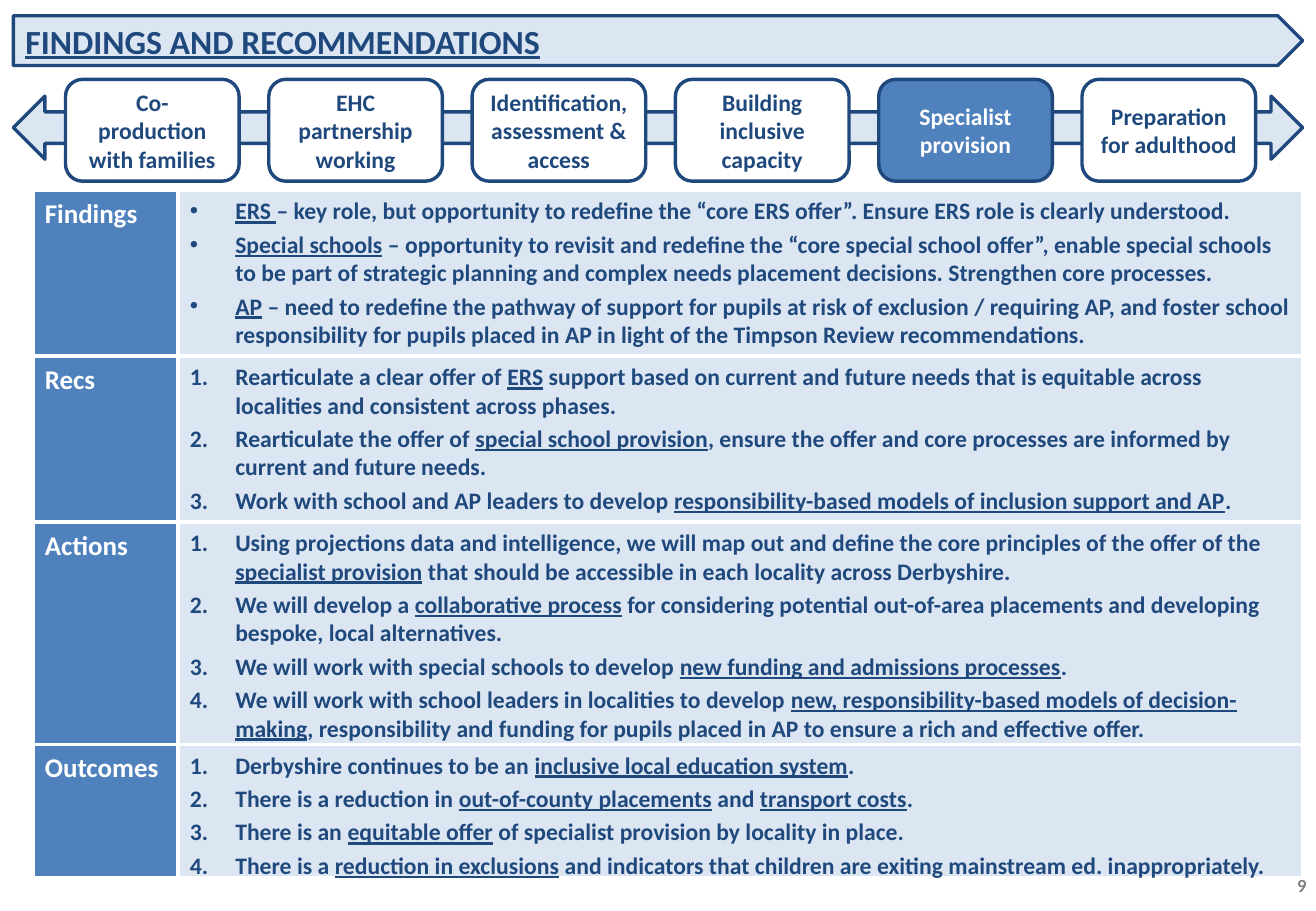
from pptx import Presentation
from pptx.dml.color import RGBColor
from pptx.enum.shapes import MSO_SHAPE
from pptx.enum.text import MSO_ANCHOR, PP_ALIGN
from pptx.oxml.ns import qn
from pptx.util import Cm, Pt
from lxml import etree

COLORS = {"navy": "1F497D", "blue": "4F81BD", "pale": "DCE6F2", "white": "FFFFFF", "grey": "808080"}
PLATE, ARROW = MSO_SHAPE.PENTAGON, MSO_SHAPE.LEFT_RIGHT_ARROW
ROUNDED, RECTANGLE = MSO_SHAPE.ROUNDED_RECTANGLE, MSO_SHAPE.RECTANGLE
TOP, MIDDLE = MSO_ANCHOR.TOP, MSO_ANCHOR.MIDDLE
LEFT, CENTER, RIGHT = PP_ALIGN.LEFT, PP_ALIGN.CENTER, PP_ALIGN.RIGHT

TITLE = "_FINDINGS AND RECOMMENDATIONS_"
PAGE_NUMBER = "9"
STEPS = [
    "Co-production with families",
    "EHC partnership working",
    "Identification, assessment & access",
    "Building inclusive capacity",
    "Specialist provision",
    "Preparation for adulthood",
]
CURRENT_STEP = "Specialist provision"
BULLET = ("buChar", {"char": "•"})
NUMBER = ("buAutoNum", {"type": "arabicPeriod"})
# Underscores enclose underlined words.
SECTIONS = [
    ("Findings", 3.47, BULLET, [
        "_ERS _– key role, but opportunity to redefine the “core ERS offer”. Ensure ERS role is clearly understood.",
        "_Special schools_ – opportunity to revisit and redefine the “core special school offer”, enable special "
        "schools to be part of strategic planning and complex needs placement decisions. Strengthen core processes.",
        "_AP_ – need to redefine the pathway of support for pupils at risk of exclusion / requiring AP, and foster "
        "school responsibility for pupils placed in AP in light of the Timpson Review recommendations.",
    ]),
    ("Recs", 3.47, NUMBER, [
        "Rearticulate a clear offer of _ERS_ support based on current and future needs that is equitable across "
        "localities and consistent across phases.",
        "Rearticulate the offer of _special school provision_, ensure the offer and core processes are informed by "
        "current and future needs.",
        "Work with school and AP leaders to develop _responsibility-based models of inclusion support and AP_.",
    ]),
    ("Actions", 4.65, NUMBER, [
        "Using projections data and intelligence, we will map out and define the core principles of the offer of "
        "the _specialist provision_ that should be accessible in each locality across Derbyshire.",
        "We will develop a _collaborative process_ for considering potential out-of-area placements and developing "
        "bespoke, local alternatives.",
        "We will work with special schools to develop _new funding and admissions processes_.",
        "We will work with school leaders in localities to develop _new, responsibility-based models of "
        "decision-making_, responsibility and funding for pupils placed in AP to ensure a rich and effective offer.",
    ]),
    ("Outcomes", 2.79, NUMBER, [
        "Derbyshire continues to be an _inclusive local education system_.",
        "There is a reduction in _out-of-county placements_ and _transport costs_.",
        "There is an _equitable offer_ of specialist provision by locality in place.",
        "There is a _reduction in exclusions_ and indicators that children are exiting mainstream ed. "
        "inappropriately.",
    ]),
]

BAND_LEFT, BAND_WIDTH = 0.28, 26.95
STEP_LEFT, STEP_TOP, STEP_PITCH, STEP_WIDTH, STEP_HEIGHT = 1.37, 1.66, 4.25, 3.63, 2.13
SECTION_TOP, LABEL_LEFT, LABEL_WIDTH, PANEL_LEFT, PANEL_WIDTH = 3.98, 0.69, 3.03, 3.72, 23.51
HANG = Cm(0.95)


def rgb(name):
    return RGBColor.from_string(COLORS[name])


def add_marker(para, marker):
    tag, values = marker
    properties = para._p.get_or_add_pPr()
    properties.set("marL", str(HANG))
    properties.set("indent", str(-HANG))
    etree.SubElement(properties, qn("a:buFont"), typeface="Arial" if marker == BULLET else "+mj-lt")
    etree.SubElement(properties, qn("a:" + tag), values)


def write(box, lines, size, color, align=LEFT, anchor=MIDDLE, after=0, marker=None):
    frame = box.text_frame
    frame.word_wrap = True
    frame.vertical_anchor = anchor
    for index, line in enumerate(lines):
        para = frame.add_paragraph() if index else frame.paragraphs[0]
        if marker:
            add_marker(para, marker)
        para.alignment = align
        para.space_after = Pt(after)
        for position, words in enumerate(line.split("_")):
            if not words:
                continue
            span = para.add_run()
            span.text = words
            look = {"name": "Calibri", "size": Pt(size), "bold": True, "underline": position % 2 == 1}
            for name, value in look.items():
                setattr(span.font, name, value)
            span.font.color.rgb = rgb(color)


def add_box(page, kind, bounds, fill, line):
    box = page.shapes.add_shape(kind, *map(Cm, bounds))
    box.shadow.inherit = False
    box.fill.solid()
    box.fill.fore_color.rgb = rgb(fill)
    box.line.color.rgb = rgb(line)
    box.line.width = Pt(2)
    return box


def main():
    deck = Presentation()
    deck.slide_width, deck.slide_height = Cm(27.51), Cm(19.05)
    page = deck.slides.add_slide(deck.slide_layouts[6])

    number_box = page.shapes.add_textbox(*map(Cm, (21.13, 17.96, 6.43, 1.09)))
    write(number_box, [PAGE_NUMBER], 11, "grey", RIGHT)

    title_box = add_box(page, PLATE, (BAND_LEFT, 0.33, BAND_WIDTH, 1.04), "pale", "navy")
    write(title_box, [TITLE], 20, "navy")
    add_box(page, ARROW, (BAND_LEFT, 2.01, BAND_WIDTH, 1.32), "pale", "navy")

    for index, step in enumerate(STEPS):
        fill, color = ("blue", "white") if step == CURRENT_STEP else ("white", "navy")
        bounds = (STEP_LEFT + index * STEP_PITCH, STEP_TOP, STEP_WIDTH, STEP_HEIGHT)
        write(add_box(page, ROUNDED, bounds, fill, "navy"), [step], 14, color, CENTER)

    top = SECTION_TOP
    for label, height, marker, lines in SECTIONS:
        panel = add_box(page, RECTANGLE, (PANEL_LEFT, top, PANEL_WIDTH, height), "pale", "white")
        write(panel, lines, 14, "navy", anchor=TOP, after=3, marker=marker)
        label_box = add_box(page, RECTANGLE, (LABEL_LEFT, top, LABEL_WIDTH, height), "blue", "white")
        write(label_box, [label], 16, "white", anchor=TOP, after=6)
        top += height

    deck.save("out.pptx")


if __name__ == "__main__":
    main()
